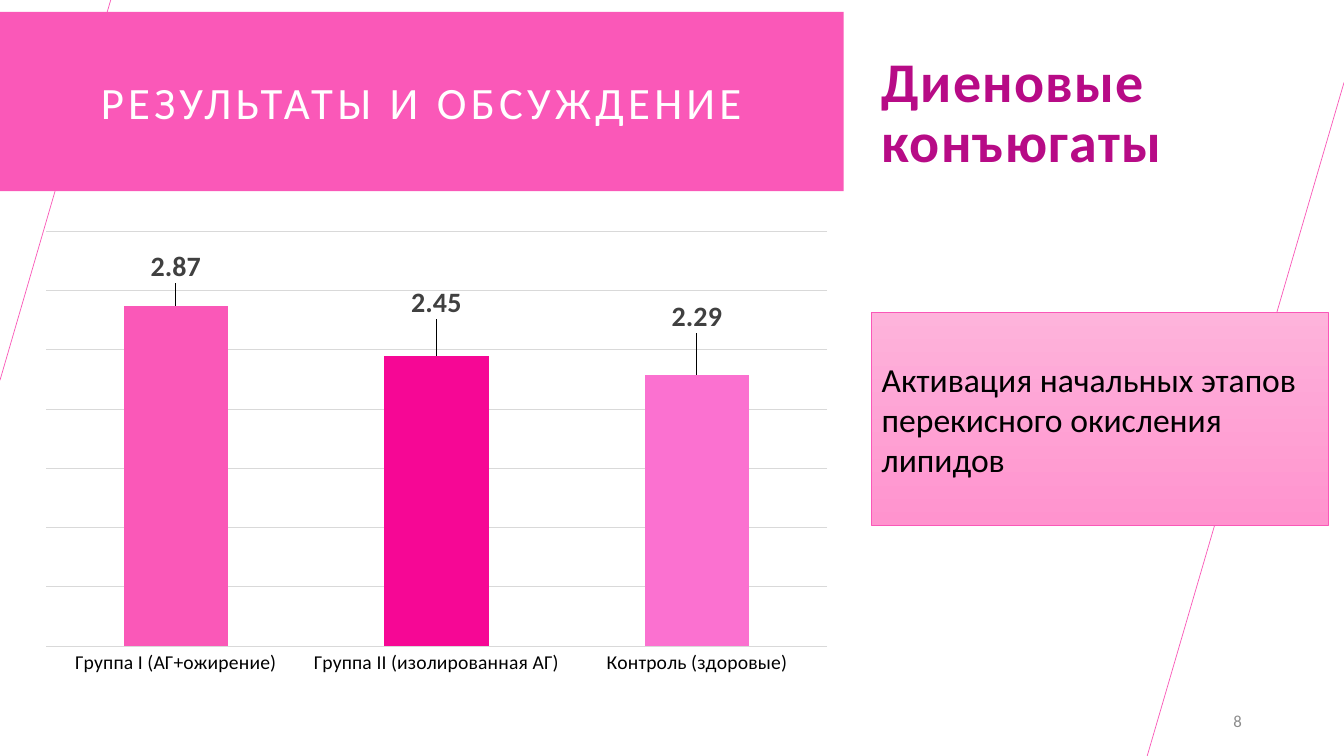
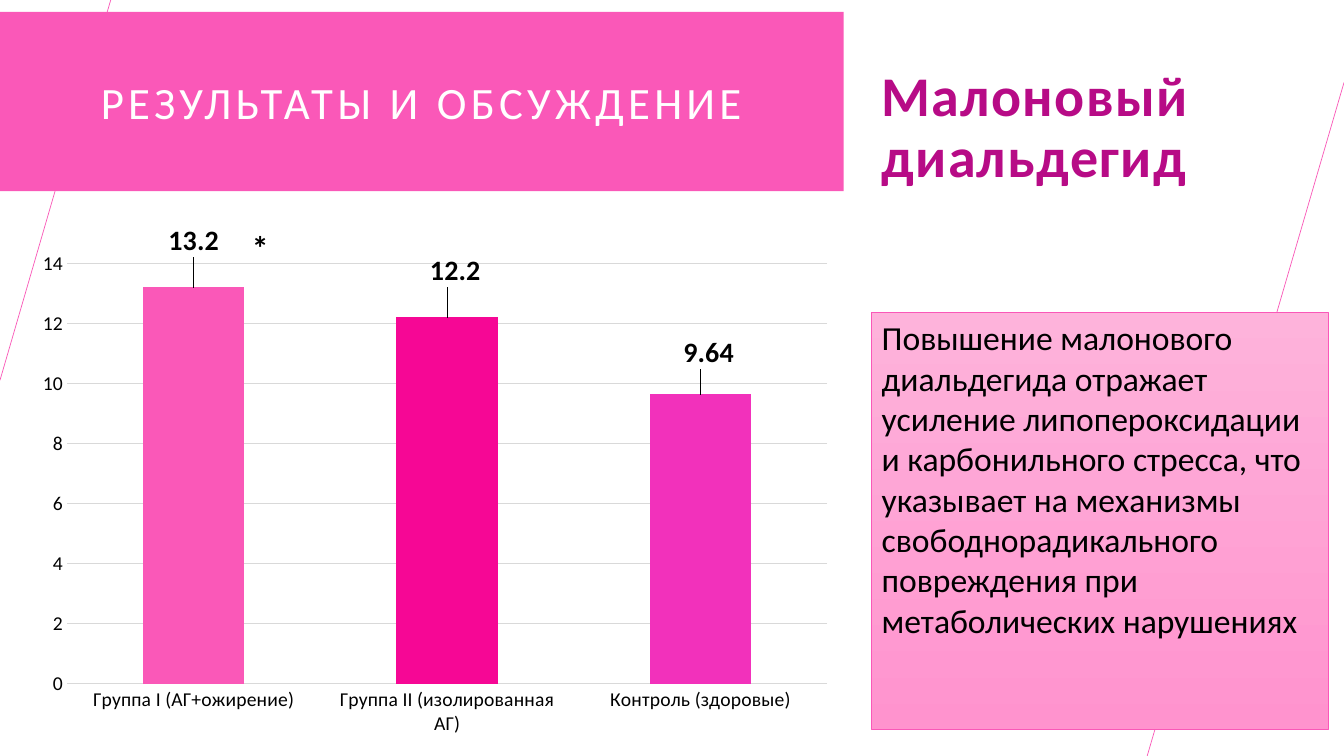
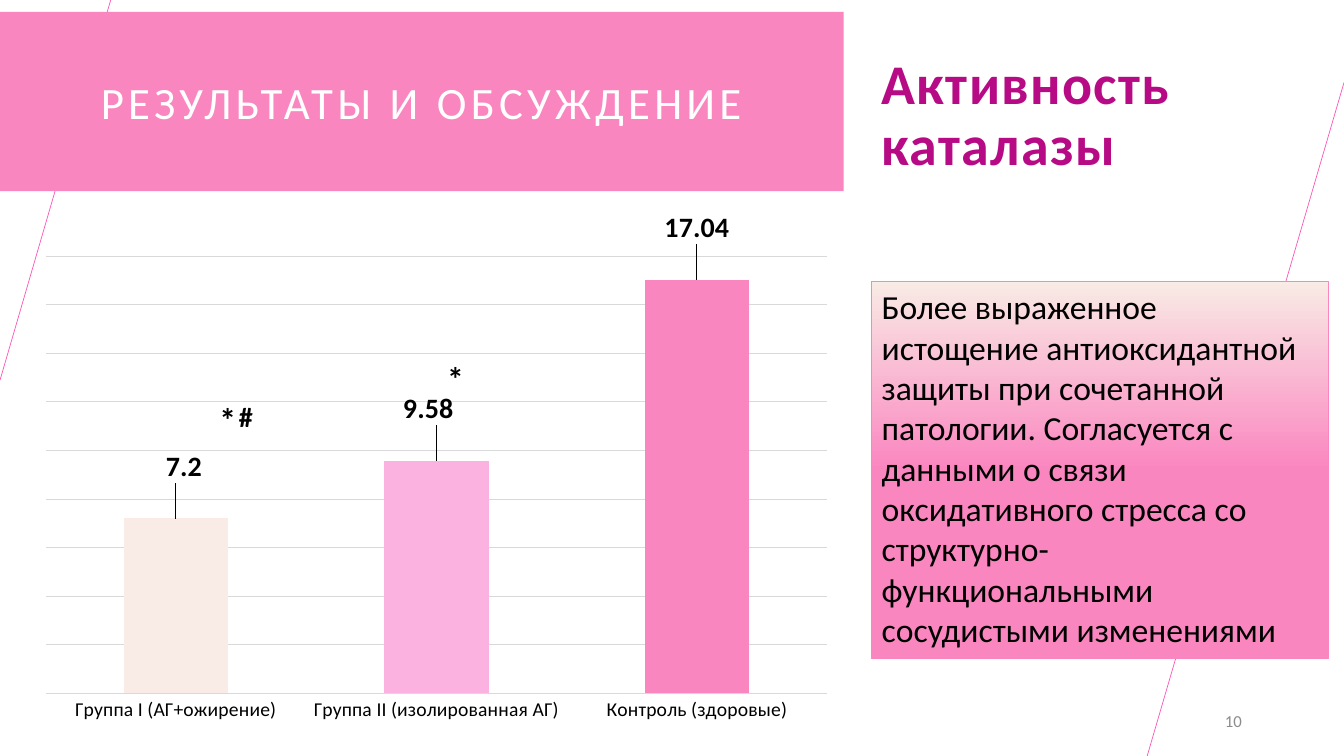
from pptx import Presentation
from pptx.chart.data import CategoryChartData
from pptx.dml.color import RGBColor
from pptx.enum.chart import XL_CHART_TYPE as ChartType, XL_LABEL_POSITION as LabelPosition, XL_TICK_MARK as TickMark
from pptx.enum.shapes import MSO_CONNECTOR as Connector, MSO_SHAPE as Shape
from pptx.enum.text import MSO_ANCHOR as Anchor, MSO_AUTO_SIZE as AutoSize, PP_ALIGN as Align
from pptx.oxml import parse_xml
from pptx.oxml.ns import nsdecls
from pptx.util import Cm, Pt

FONT = "Calibri"
PINK = "FA58B8"
SOFT_PINK = "FA86C0"
MAGENTA = "F60795"
CREAM = "F9EBE5"
PLUM = "B70B86"
BLACK = "000000"
WHITE = "FFFFFF"
GRID = "D9D9D9"
LABEL_GREY = "404040"
NUMBER_GREY = "8C8C8C"
PINK_FADE = ("FEB3DB", "FF93CE", 1)
CREAM_FADE = (CREAM, SOFT_PINK, 0.5)
SIDE_LEFT = 21.97
SIDE_WIDTH = 11.5
GROUPS = ("Группа I (АГ+ожирение)", "Группа II (изолированная АГ)", "Контроль (здоровые)")


def color(value):
    return RGBColor.from_string(value)


def place(*lengths):
    return [Cm(length) for length in lengths]


def style_font(font, size, tint=BLACK, bold=False):
    font.name = FONT
    font.size = Pt(size)
    font.bold = bold
    font.color.rgb = color(tint)


def write(shape, text, size, tint=BLACK, bold=False, spacing=0, align=Align.LEFT,
          anchor=Anchor.TOP, line_spacing=None, wrap=True):
    frame = shape.text_frame
    frame.word_wrap = wrap
    frame.vertical_anchor = anchor
    para = frame.paragraphs[0]
    para.alignment = align
    if line_spacing:
        para.line_spacing = line_spacing
    span = para.add_run()
    span.text = text
    style_font(span.font, size, tint, bold)
    if spacing:
        span.font._element.set("spc", str(spacing * 100))
    return frame


def add_text(page, area, text, size, **style):
    box = page.shapes.add_textbox(*place(*area))
    return write(box, text, size, **style)


def add_rectangle(page, area):
    box = page.shapes.add_shape(Shape.RECTANGLE, *place(*area))
    box.shadow.inherit = False
    return box


def add_diagonal(page, *ends):
    line = page.shapes.add_connector(Connector.STRAIGHT, *place(*ends))
    line.line.color.rgb = color(PINK)
    line.line.width = Pt(0.5)
    line._element.spPr.append(parse_xml(f"<a:effectLst {nsdecls('a')}/>"))


def add_band(page, fill):
    band = add_rectangle(page, (0, 0.3, 21.26, 4.52))
    band.fill.solid()
    band.fill.fore_color.rgb = color(fill)
    band.line.fill.background()
    frame = write(band, "РЕЗУЛЬТАТЫ И ОБСУЖДЕНИЕ", 32, tint=WHITE, spacing=3, anchor=Anchor.MIDDLE)
    frame.margin_left = Cm(2.54)
    frame.margin_right = 0


def add_page(deck, heading, top, band=PINK, heading_width=9.58):
    page = deck.slides.add_slide(deck.slide_layouts[6])
    add_diagonal(page, 2.79, 0, 0, 9.58)
    add_diagonal(page, 33.87, 2.08, 28.91, 19.05)
    add_band(page, band)
    add_text(page, (SIDE_LEFT, top, heading_width, 3.3), heading, 40,
             tint=PLUM, bold=True, spacing=1, line_spacing=0.9)
    return page


def add_number(page, number):
    add_text(page, (23.93, 17.65, 7.62, 1.02), number, 12, tint=NUMBER_GREY,
             align=Align.RIGHT, anchor=Anchor.MIDDLE)


def add_conclusion(page, top, height, text, fade=PINK_FADE, outline=PINK, anchor=Anchor.TOP):
    box = add_rectangle(page, (SIDE_LEFT, top, SIDE_WIDTH, height))
    start, end, reach = fade
    box.fill.gradient()
    box.fill.gradient_angle = 270
    first, last = box.fill.gradient_stops
    first.color.rgb = color(start)
    last.color.rgb = color(end)
    last.position = reach
    box.line.color.rgb = color(outline)
    box.line.width = Pt(0.5)
    write(box, text, 24, anchor=anchor)


def add_mark(page, left, top, sign="*", size=24):
    frame = add_text(page, (left, top, 0.84, 1.27), sign, size, bold=True, wrap=False)
    frame.auto_size = AutoSize.SHAPE_TO_FIT_TEXT


def layout_xml(**values):
    parts = "".join(f'<c:{name} val="{value}"/>' for name, value in values.items())
    return parse_xml(f"<c:layout {nsdecls('c')}><c:manualLayout>{parts}</c:manualLayout></c:layout>")


def set_plot_area(chart, x, y, w, h):
    plot_area = chart.plots[0]._element.getparent()
    for old in plot_area.xpath("c:layout"):
        plot_area.remove(old)
    plot_area.insert(0, layout_xml(layoutTarget="inner", xMode="edge", yMode="edge", x=x, y=y, w=w, h=h))


def style_axes(chart, maximum, step, show_values):
    chart.category_axis.has_major_gridlines = False
    scale = chart.value_axis
    scale.minimum_scale = 0
    scale.maximum_scale = maximum
    scale.major_unit = step
    scale.has_major_gridlines = True
    scale.major_gridlines.format.line.color.rgb = color(GRID)
    scale.major_gridlines.format.line.width = Pt(0.75)
    for axis in (chart.category_axis, scale):
        axis.major_tick_mark = axis.minor_tick_mark = TickMark.NONE
        axis.format.line.fill.background()
        style_font(axis.tick_labels.font, 14)
    scale.visible = show_values


def add_columns(page, area, values, fills, shifts, plot_area, maximum, step,
                show_values=False, label_tint=BLACK):
    data = CategoryChartData()
    data.categories = GROUPS
    data.add_series("Series 1", values)
    chart = page.shapes.add_chart(ChartType.COLUMN_CLUSTERED, *place(*area), data).chart
    chart.has_title = False
    chart.has_legend = False
    style_font(chart.font, 14)
    style_axes(chart, maximum, step, show_values)
    set_plot_area(chart, *plot_area)
    plot = chart.plots[0]
    plot.gap_width = 150
    plot.vary_by_categories = False
    series = plot.series[0]
    for index, fill in enumerate(fills):
        point = series.points[index]
        point.format.fill.solid()
        point.format.fill.fore_color.rgb = color(fill)
        style_font(point.data_label.font, 20, label_tint, bold=True)
        point.data_label.position = LabelPosition.OUTSIDE_END
    for label, (x, y) in zip(series._element.xpath("c:dLbls/c:dLbl"), shifts):
        label.insert(1, layout_xml(x=x, y=y))


def add_conjugates(deck):
    page = add_page(deck, "Диеновые конъюгаты", 1.24, heading_width=SIDE_WIDTH)
    add_columns(page, (0.74, 5.59, 20.52, 11.63), (2.87, 2.45, 2.29), (PINK, MAGENTA, "FB71D0"),
                ((0, -0.04), (0, -0.07), (0, -0.08)), (0.02, 0.02, 0.96, 0.9), 3.5, 0.5,
                label_tint=LABEL_GREY)
    add_number(page, "8")
    add_conclusion(page, 7.87, 5.38, "Активация начальных этапов перекисного окисления липидов",
                   anchor=Anchor.MIDDLE)


def add_dialdehyde(deck):
    page = add_page(deck, "Малоновый диальдегид", 1.6)
    add_columns(page, (0.66, 5.59, 20.6, 13.08), (13.2, 12.2, 9.64), (PINK, MAGENTA, "F231BB"),
                ((0, -0.05), (0.01, -0.05), (0.01, -0.04)), (0.05, 0.08, 0.93, 0.81), 14, 2,
                show_values=True)
    add_mark(page, 6.1, 5.59)
    add_conclusion(page, 7.87, 10.52,
                   "Повышение малонового диальдегида отражает усиление липопероксидации и карбонильного "
                   "стресса, что указывает на механизмы свободнорадикального повреждения при "
                   "метаболических нарушениях")


def add_catalase(deck):
    page = add_page(deck, "Активность каталазы", 1.3, band=SOFT_PINK)
    add_columns(page, (0.74, 5.28, 20.52, 13.11), (7.2, 9.58, 17.04), (CREAM, "FCB2E0", SOFT_PINK),
                ((0.01, -0.06), (-0.01, -0.06), (0, -0.06)), (0.02, 0.09, 0.96, 0.84), 18, 2)
    add_number(page, "10")
    add_mark(page, 11.02, 8.89)
    add_conclusion(page, 7.09, 9.5,
                   "Более выраженное истощение антиоксидантной защиты при сочетанной патологии. "
                   "Согласуется с данными о связи оксидативного стресса со "
                   "структурно-функциональными сосудистыми изменениями",
                   fade=CREAM_FADE, outline=SOFT_PINK)
    add_mark(page, 5.28, 9.93)
    add_mark(page, 5.77, 9.93, sign="#", size=20)


def main():
    deck = Presentation()
    deck.slide_width, deck.slide_height = place(33.87, 19.05)
    add_conjugates(deck)
    add_dialdehyde(deck)
    add_catalase(deck)
    deck.save("out.pptx")


if __name__ == "__main__":
    main()
